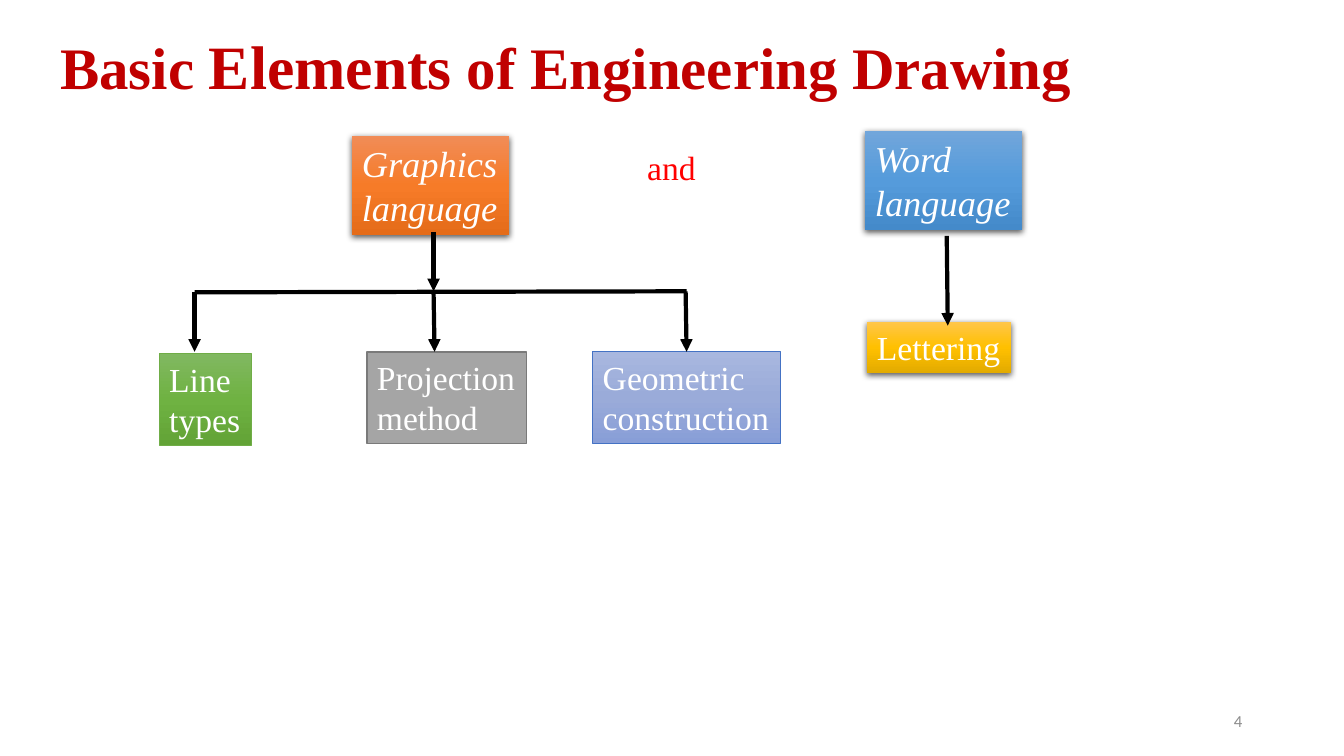
from copy import deepcopy

from lxml import etree
from pptx import Presentation
from pptx import util as u
from pptx.dml.color import RGBColor
from pptx.enum import shapes, text
from pptx.oxml import ns

RED = RGBColor(0xC0, 0x00, 0x00)
BRIGHT = RGBColor(0xFF, 0x00, 0x00)
WHITE = RGBColor(0xFF, 0xFF, 0xFF)
BLACK = RGBColor(0x00, 0x00, 0x00)
PALE = RGBColor(0x8C, 0x8C, 0x8C)
GRAY = RGBColor(0xA5, 0xA5, 0xA5)
DARK = RGBColor(0x7A, 0x7A, 0x7A)
GREEN = RGBColor(0x70, 0xAD, 0x47)
BLUE = RGBColor(0x44, 0x72, 0xC4)
ORANGE_FADE = [RGBColor(0xF1, 0x8C, 0x57), RGBColor(0xF6, 0x7B, 0x28), RGBColor(0xE5, 0x6C, 0x19)]
SKY_FADE = [RGBColor(0x71, 0xA6, 0xDB), RGBColor(0x55, 0x9B, 0xDB), RGBColor(0x44, 0x8A, 0xCA)]
GREEN_FADE = [RGBColor(0x81, 0xB8, 0x61), RGBColor(0x6F, 0xB2, 0x42), RGBColor(0x62, 0xA3, 0x36)]
BLUE_FADE = [RGBColor(0xA8, 0xB7, 0xDF), RGBColor(0x9A, 0xAB, 0xD9), RGBColor(0x88, 0x9E, 0xD7)]
GOLD_FADE = [RGBColor(0xFF, 0xC6, 0x4B), RGBColor(0xFF, 0xC0, 0x00), RGBColor(0xE3, 0xAB, 0x00)]


def add_xml(parent, tag, **attrs):
    return etree.SubElement(parent, ns.qn(tag), attrs)


class Board:
    """Draws elements on one slide in a shared style."""

    serif = "Times New Roman"
    sans = "Calibri"

    def __init__(self, slide):
        self.shapes = slide.shapes

    def letter(self, shape, lines, size, color, font=serif, italic=None, bold=None,
               align=text.PP_ALIGN.LEFT, wrap=False):
        """Set each line as a paragraph; a line may be a list of (text, size) runs."""
        frame = shape.text_frame
        frame.word_wrap = wrap
        if not wrap:
            frame.auto_size = text.MSO_AUTO_SIZE.SHAPE_TO_FIT_TEXT
        for i, line in enumerate(lines):
            para = frame.paragraphs[0] if i == 0 else frame.add_paragraph()
            para.alignment = align
            style = para.font
            style.name, style.size, style.color.rgb = font, u.Pt(size), color
            style.italic, style.bold = italic, bold
            if isinstance(line, str):
                para.add_run().text = line
            else:
                for words, points in line:
                    run = para.add_run()
                    run.text, run.font.size = words, u.Pt(points)

    def label(self, place, line, size, color, **style):
        box = self.shapes.add_textbox(*map(u.Inches, place))
        self.letter(box, [line], size, color, **style)
        return box

    def fade(self, shape, colors):
        """Fill with a gradient of three colours from top to bottom."""
        shape.fill.gradient()
        shape.fill.gradient_angle = 270
        first = shape._element.spPr.find(".//" + ns.qn("a:gs"))
        first.addnext(deepcopy(first))
        for i, (stop, color) in enumerate(zip(shape.fill.gradient_stops, colors)):
            stop.position, stop.color.rgb = i / 2, color

    def shade(self, shape):
        effects = shape._element.spPr.find(ns.qn("a:effectLst"))
        shadow = add_xml(effects, "a:outerShdw", blurRad=str(u.Pt(4.5)), dist=str(u.Pt(1.5)),
                         dir="5400000", algn="ctr", rotWithShape="0")
        tint = add_xml(shadow, "a:srgbClr", val="000000")
        add_xml(tint, "a:alpha", val="63000")

    def card(self, place, lines, fill, line=None, width=0.5, size=24, italic=None):
        """Draw a box; one without an outline casts a shadow."""
        box = self.shapes.add_shape(shapes.MSO_SHAPE.RECTANGLE, *map(u.Inches, place))
        box.shadow.inherit = False
        if isinstance(fill, list):
            self.fade(box, fill)
        else:
            box.fill.solid()
            box.fill.fore_color.rgb = fill
        if line:
            box.line.color.rgb, box.line.width = line, u.Pt(width)
        else:
            box.line.fill.background()
            self.shade(box)
        box.text_frame.vertical_anchor = text.MSO_ANCHOR.TOP
        self.letter(box, lines, size, WHITE, italic=italic)
        return box

    def link(self, start, end, arrow=True):
        line = self.shapes.add_connector(shapes.MSO_CONNECTOR.STRAIGHT,
                                         *map(u.Inches, start + end))
        line.line.color.rgb, line.line.width = BLACK, u.Pt(3)
        props = line._element.spPr
        if arrow:
            add_xml(props.find(ns.qn("a:ln")), "a:tailEnd", type="triangle")
        add_xml(props, "a:effectLst")
        return line


def main():
    deck = Presentation()
    deck.slide_width, deck.slide_height = u.Inches(13.33), u.Inches(7.5)
    board = Board(deck.slides.add_slide(deck.slide_layouts[6]))

    title = [("Basic ", 42), ("Elements", 44), (" of Engineering Drawing", 42)]
    board.label((0.5, 0.23, 10.32, 0.84), title, 42, RED, bold=True)

    board.card((3.49, 1.35, 1.56, 0.98), ["Graphics", "language"], ORANGE_FADE,
               size=26, italic=True)
    board.card((8.58, 1.3, 1.56, 0.98), ["Word", "language"], SKY_FADE, size=26, italic=True)
    board.card((1.58, 3.51, 0.91, 0.91), ["Line", "types"], GREEN_FADE, GREEN)
    geometry = board.card((5.88, 3.49, 1.86, 0.91), ["Geometric", "construction"],
                          BLUE_FADE, BLUE)
    board.card((8.6, 3.19, 1.43, 0.51), ["Lettering"], GOLD_FADE)
    board.card((3.64, 3.49, 1.58, 0.91), ["Projection", "method"], GRAY, DARK, width=1)

    board.link((1.93, 2.9), (6.81, 2.89), arrow=False)
    for start, end in [((1.93, 2.9), (1.93, 3.49)), ((4.3, 2.89), (4.31, 3.49)),
                       ((4.3, 2.3), (4.3, 2.89)), ((9.39, 2.34), (9.4, 3.23))]:
        board.link(start, end)
    board.link((6.8, 2.89), (6.81, 3.49)).end_connect(geometry, 0)

    number = board.label((9.42, 6.95, 3, 0.4), "4", 12, PALE, font=Board.sans,
                         align=text.PP_ALIGN.RIGHT, wrap=True)
    number.text_frame.vertical_anchor = text.MSO_ANCHOR.MIDDLE
    board.label((6.32, 1.41, 0.69, 0.5), "and", 24, BRIGHT)

    deck.save("out.pptx")


if __name__ == "__main__":
    main()
